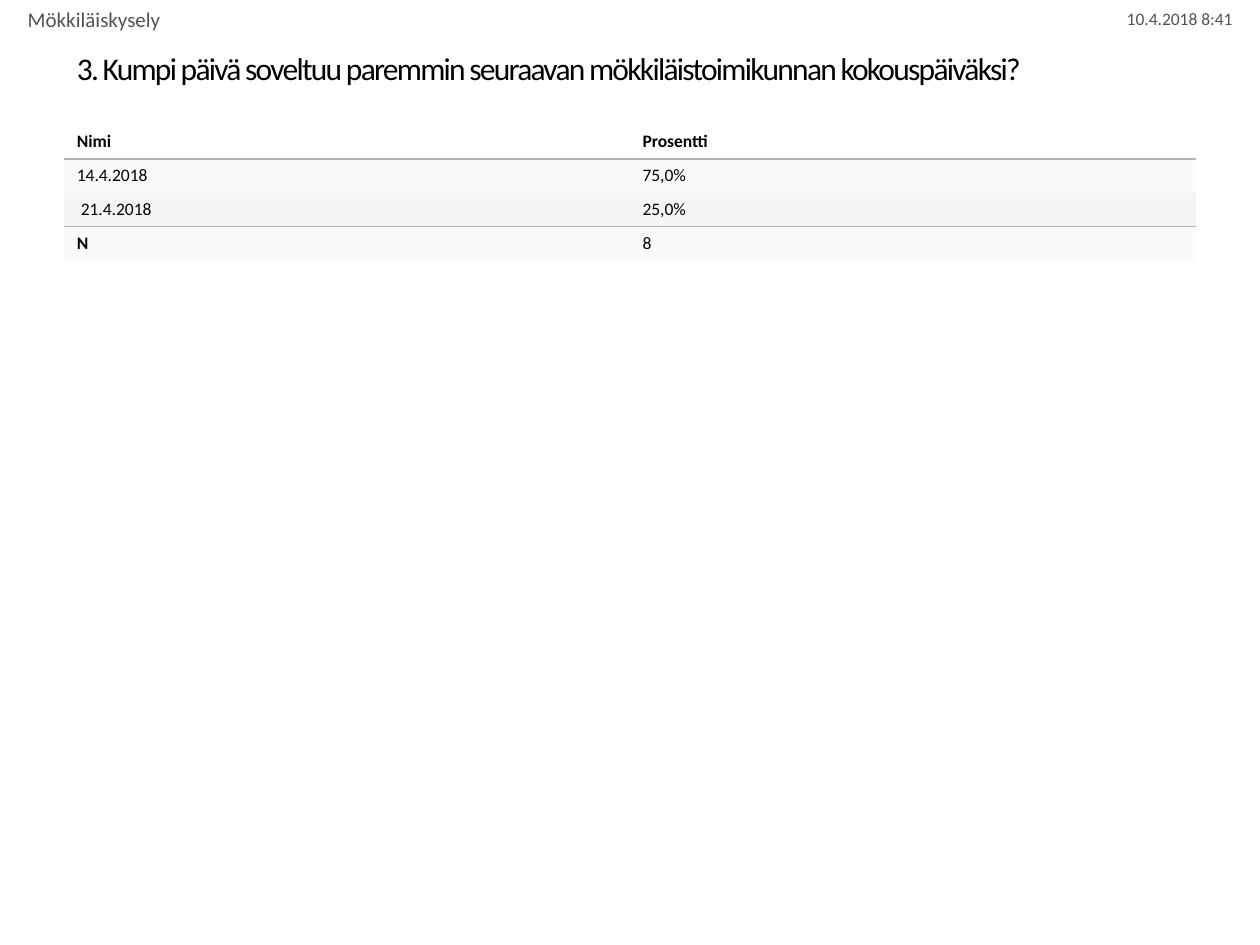
from lxml.etree import SubElement
from pptx import Presentation
from pptx.dml.color import RGBColor
from pptx.enum.text import MSO_ANCHOR as Anchor, MSO_AUTO_SIZE as AutoSize, PP_ALIGN as Align
from pptx.oxml.ns import qn
from pptx.util import Inches, Pt

FONT = "Calibri"
COLORS = {"text": "000000", "header": "535353", "rule": "B4B4B4",
          "white": "FFFFFF", "light": "FAFAFA", "band": "F5F5F5"}

SURVEY = "Mökkiläiskysely"
PRINTED = "10.4.2018 8:41"
QUESTION = "3. Kumpi päivä soveltuu paremmin seuraavan mökkiläistoimikunnan kokouspäiväksi?"
ANSWERS = [
    ("Nimi", "Prosentti"),
    ("14.4.2018", "75,0%"),
    (" 21.4.2018", "25,0%"),
    ("N", "8"),
]
ROW_FILLS = ["white", "light", "band", "light"]
BOLD_CELLS = {(0, 0), (0, 1), (3, 0)}
RULED_ROWS = {0: 1.5, 2: 1}
TABLE_LEFT, TABLE_TOP, COLUMN_WIDTH, ROW_HEIGHT = 0.51, 0.99, 4.49, 0.27


def style(para, size, color, bold=False, align=Align.LEFT):
    para.alignment = align
    para.font.name = FONT
    para.font.size = Pt(size)
    para.font.bold = bold
    para.font.color.rgb = RGBColor.from_string(COLORS[color])


def write(box, text, area, size, color, anchor, align=Align.LEFT):
    box.left, box.top, box.width, box.height = map(Inches, area)
    frame = box.text_frame
    frame.word_wrap = True
    frame.auto_size = AutoSize.NONE
    frame.vertical_anchor = anchor
    frame.text = text
    para = frame.paragraphs[0]
    style(para, size, color, align=align)
    return para


def set_borders(cell, top, bottom):
    props = cell._tc.get_or_add_tcPr()
    for side, width in (("L", 0), ("R", 0), ("T", top), ("B", bottom)):
        line = SubElement(props, qn(f"a:ln{side}"), w=str(Pt(width)))
        if width:
            fill = SubElement(line, qn("a:solidFill"))
            SubElement(fill, qn("a:srgbClr"), val=COLORS["rule"])
        else:
            SubElement(line, qn("a:noFill"))


def add_answers(page):
    rows, columns = len(ANSWERS), len(ANSWERS[0])
    frame = page.shapes.add_table(
        rows, columns, Inches(TABLE_LEFT), Inches(TABLE_TOP),
        Inches(COLUMN_WIDTH * columns), Inches(ROW_HEIGHT * rows))
    table = frame.table
    table.horz_banding = False
    for r, answer in enumerate(ANSWERS):
        for c, text in enumerate(answer):
            cell = table.cell(r, c)
            cell.text = text
            style(cell.text_frame.paragraphs[0], 10, "text", (r, c) in BOLD_CELLS)
            set_borders(cell, RULED_ROWS.get(r - 1, 0), RULED_ROWS.get(r, 0))
            cell.fill.solid()
            cell.fill.fore_color.rgb = RGBColor.from_string(COLORS[ROW_FILLS[r]])


def main():
    deck = Presentation()
    deck.slide_width, deck.slide_height = Inches(10), Inches(7.5)
    page = deck.slides.add_slide(deck.slide_layouts[1])

    date_box = page.shapes.add_textbox(0, 0, 0, 0)
    write(date_box, PRINTED, (6.34, 0.04, 3.54, 0.21), 10, "header", Anchor.MIDDLE, Align.RIGHT)

    title = write(page.shapes.title, QUESTION, (0.51, 0.24, 9, 0.6), 18, "text", Anchor.MIDDLE)
    title.runs[0].font._element.set("spc", "-100")

    survey = write(page.placeholders[1], SURVEY, (0, 0, 10, 0.25), 12, "header", Anchor.TOP)
    props = survey._p.get_or_add_pPr()
    props.set("marL", str(Inches(0.12)))
    props.set("indent", "0")
    survey.space_before = Pt(2.4)
    props.insert_element_before(props.makeelement(qn("a:buNone")), "a:tabLst", "a:defRPr", "a:extLst")

    add_answers(page)
    deck.save("out.pptx")


if __name__ == "__main__":
    main()
